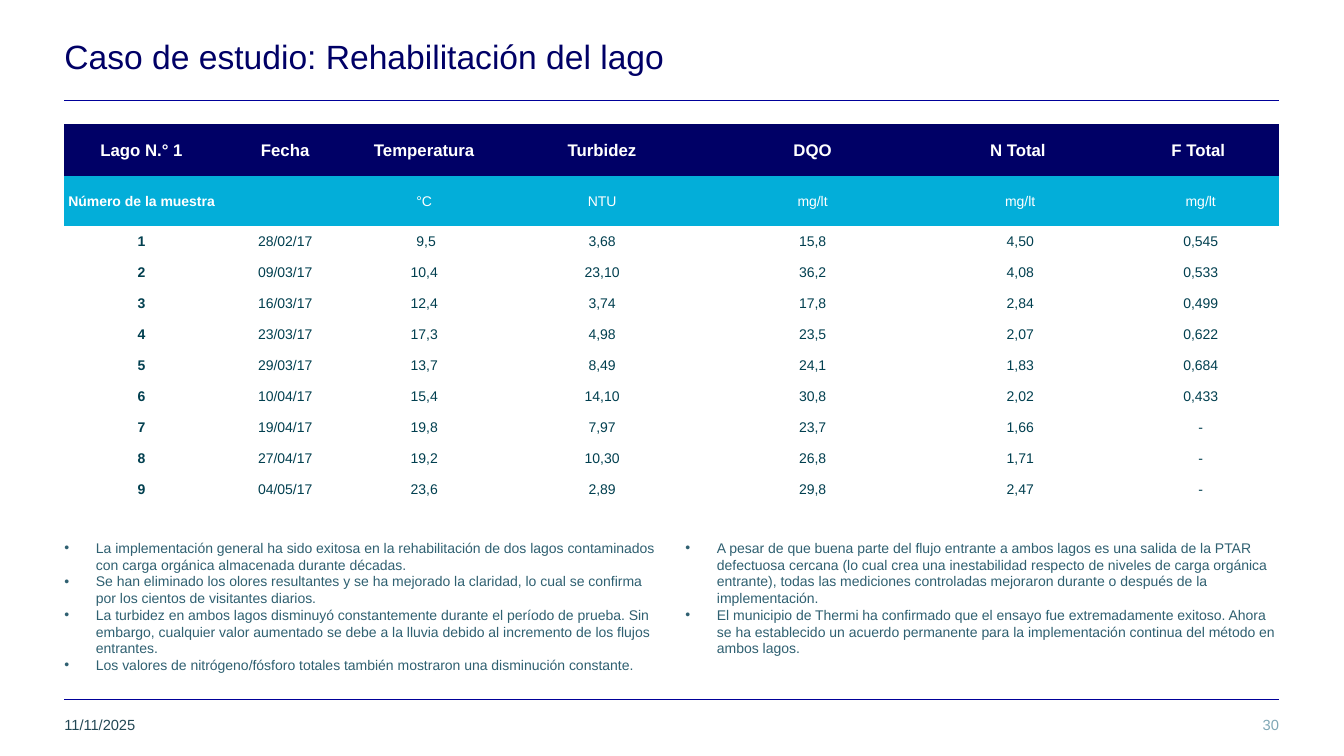
from lxml.etree import SubElement
from pptx import Presentation
from pptx.dml.color import RGBColor
from pptx.enum.shapes import MSO_CONNECTOR
from pptx.enum.text import MSO_ANCHOR, MSO_AUTO_SIZE, PP_ALIGN
from pptx.oxml.ns import qn
from pptx.util import Pt

COLORS = {
    "navy": "000066", "rule": "000099", "cyan": "03AED9", "white": "FFFFFF",
    "table_text": "013F4F", "body": "2F6071", "date": "234855", "number": "80A8B6",
}
LEFT, WIDTH = 46, 867.6
PLAIN_TABLE_STYLE = "{2D5ABB26-0587-4C30-8999-92F81FD0307C}"
COLUMN_WIDTHS = [110.2, 95, 103.7, 150.4, 150.4, 146.2, 111.7]
ROW_HEIGHTS = [37.4, 35.3] + [22.15] * 9

MEASUREMENTS = [
    ["Lago N.° 1", "Fecha", "Temperatura", "Turbidez", "DQO", "N Total ", "F Total "],
    ["Número de la muestra", "", "°C", "NTU", "mg/lt", "mg/lt", "mg/lt"],
    ["1", "28/02/17", " 9,5", "3,68", "15,8", "4,50", "0,545"],
    ["2", "09/03/17", "10,4", "23,10", "36,2", "4,08", "0,533"],
    ["3", "16/03/17", "12,4", "3,74", "17,8", "2,84", "0,499"],
    ["4", "23/03/17", "17,3", "4,98", "23,5", "2,07", "0,622"],
    ["5", "29/03/17", "13,7", "8,49", "24,1", "1,83", "0,684"],
    ["6", "10/04/17", "15,4", "14,10", "30,8", "2,02", "0,433"],
    ["7", "19/04/17", "19,8", "7,97", "23,7", "1,66", "-"],
    ["8", "27/04/17", "19,2", "10,30", "26,8", "1,71", "-"],
    ["9", "04/05/17", "23,6", "2,89", "29,8", "2,47", "-"],
]
RESULTS = [
    "La implementación general ha sido exitosa en la rehabilitación de dos lagos "
    "contaminados con carga orgánica almacenada durante décadas.",
    "Se han eliminado los olores resultantes y se ha mejorado la claridad, lo cual se "
    "confirma por los cientos de visitantes diarios.",
    "La turbidez en ambos lagos disminuyó constantemente durante el período de prueba. "
    "Sin embargo, cualquier valor aumentado se debe a la lluvia debido al incremento de "
    "los flujos entrantes.",
    "Los valores de nitrógeno/fósforo totales también mostraron una disminución constante.",
]
CONCLUSIONS = [
    "A pesar de que buena parte del flujo entrante a ambos lagos es una salida de la PTAR "
    "defectuosa cercana (lo cual crea una inestabilidad respecto de niveles de carga "
    "orgánica entrante), todas las mediciones controladas mejoraron durante o después de "
    "la implementación.",
    "El municipio de Thermi ha confirmado que el ensayo fue extremadamente exitoso. Ahora "
    "se ha establecido un acuerdo permanente para la implementación continua del método en "
    "ambos lagos.",
]


def color(name):
    return RGBColor.from_string(COLORS[name])


def write(frame, *texts, size, fill, bold=False, align=PP_ALIGN.LEFT, spacing=1.0, indent=0):
    for index, text in enumerate(texts):
        paragraph = frame.paragraphs[0] if index == 0 else frame.add_paragraph()
        paragraph.alignment = align
        paragraph.line_spacing = spacing
        paragraph.space_before = paragraph.space_after = Pt(0)
        if indent:
            properties = paragraph._p.get_or_add_pPr()
            properties.set("marL", str(Pt(indent)))
            properties.set("indent", str(-Pt(indent)))
            SubElement(properties, qn("a:buFont"), typeface="Arial")
            SubElement(properties, qn("a:buChar"), char="•")
        run = paragraph.add_run()
        run.text = text
        run.font.name = "Arial"
        run.font.size = Pt(size)
        run.font.bold = bold
        run.font.color.rgb = color(fill)


class SlideBuilder:
    def __init__(self, slide):
        self.slide = slide

    def prepare(self, shape, left, top, width, height):
        shape.left, shape.top = Pt(left), Pt(top)
        shape.width, shape.height = Pt(width), Pt(height)
        frame = shape.text_frame
        frame.word_wrap = True
        frame.auto_size = MSO_AUTO_SIZE.NONE
        frame.vertical_anchor = MSO_ANCHOR.TOP
        frame.margin_left = frame.margin_right = frame.margin_top = frame.margin_bottom = 0
        return frame

    def rule(self, top):
        line = self.slide.shapes.add_connector(
            MSO_CONNECTOR.STRAIGHT, Pt(LEFT), Pt(top), Pt(LEFT + WIDTH), Pt(top))
        line.line.color.rgb = color("rule")
        line.line.width = Pt(0.5)
        SubElement(line._element.spPr, qn("a:effectLst"))

    def placeholder(self, index, box, *texts, **style):
        write(self.prepare(self.slide.placeholders[index], *box), *texts, **style)

    def label(self, box, text, **style):
        shape = self.slide.shapes.add_textbox(0, 0, 0, 0)
        write(self.prepare(shape, *box), text, **style)

    def table(self, top, rows):
        shape = self.slide.shapes.add_table(
            len(rows), len(COLUMN_WIDTHS), Pt(LEFT), Pt(top), Pt(WIDTH), Pt(sum(ROW_HEIGHTS)))
        table = shape.table
        table.first_row = table.horz_banding = False
        table._tbl.tblPr.find(qn("a:tableStyleId")).text = PLAIN_TABLE_STYLE
        for column, width in zip(table.columns, COLUMN_WIDTHS):
            column.width = Pt(width)
        for row, height in zip(table.rows, ROW_HEIGHTS):
            row.height = Pt(height)
        for row_index, values in enumerate(rows):
            for column_index, value in enumerate(values):
                self.cell(table.cell(row_index, column_index), value, row_index, column_index)

    def cell(self, cell, value, row_index, column_index):
        cell.vertical_anchor = MSO_ANCHOR.MIDDLE
        cell.margin_left = cell.margin_right = cell.margin_top = Pt(0.7)
        cell.margin_bottom = 0
        if row_index < 2:
            cell.fill.solid()
            cell.fill.fore_color.rgb = color(("navy", "cyan")[row_index])
        else:
            cell.fill.background()
        if value:
            write(cell.text_frame, value, size=12 if row_index == 0 else 10,
                  fill="white" if row_index < 2 else "table_text",
                  bold=row_index == 0 or column_index == 0, align=PP_ALIGN.CENTER)


def main():
    presentation = Presentation()
    presentation.slide_width, presentation.slide_height = Pt(960), Pt(540)
    two_content = presentation.slide_layouts[3]
    builder = SlideBuilder(presentation.slides.add_slide(two_content))

    # Title and rules
    builder.rule(499.7)
    builder.rule(72)
    builder.placeholder(0, (LEFT, 28.8, WIDTH, 42.5), "Caso de estudio: Rehabilitación del lago",
                        size=24, fill="navy", spacing=0.9)

    # Lake measurements
    builder.table(88.6, MEASUREMENTS)

    # Findings in two columns
    column_width = 424
    right_column = LEFT + WIDTH - column_width
    findings = dict(size=10, fill="body", spacing=Pt(12), indent=22.5)
    builder.placeholder(1, (LEFT, 385.2, column_width, 97.2), *RESULTS, **findings)
    builder.placeholder(2, (right_column, 385.2, column_width, 85), *CONCLUSIONS, **findings)

    # Footer
    builder.label((LEFT, 511.2, 216, 18), "11/11/2025", size=10.5, fill="date")
    builder.label((LEFT + WIDTH - 216, 511.2, 216, 18), "30", size=10.5, fill="number",
                  align=PP_ALIGN.RIGHT)

    presentation.save("out.pptx")


if __name__ == "__main__":
    main()
